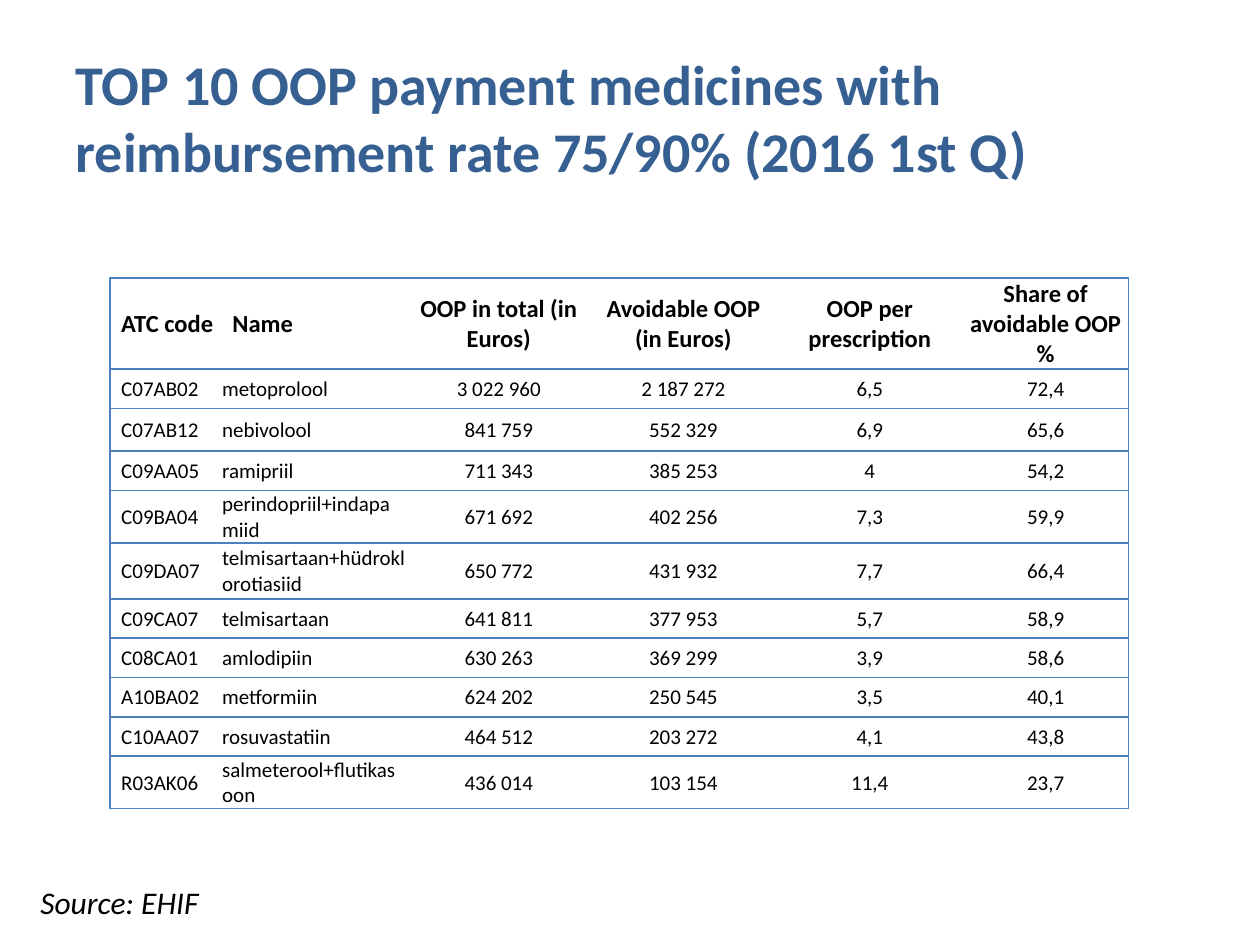
from dataclasses import dataclass
from typing import Any

from lxml import etree
from pptx import Presentation
from pptx.dml.color import RGBColor
from pptx.enum import text
from pptx.oxml import ns
from pptx.util import Pt

COLORS = {"title": "376092", "ink": "000000", "line": "4F81BD", "paper": "FFFFFF"}

HEADER = ["ATC code", "Name", "OOP in total (in Euros)", "Avoidable OOP (in Euros)",
          "OOP per prescription", "Share of avoidable OOP %"]
MEDICINES = [
    ["C07AB02", "metoprolool", "3 022 960", "2 187 272", "6,5", "72,4"],
    ["C07AB12", "nebivolool", "841 759", "552 329", "6,9", "65,6"],
    ["C09AA05", "ramipriil", "711 343", "385 253", "4", "54,2"],
    ["C09BA04", "perindopriil+indapamiid", "671 692", "402 256", "7,3", "59,9"],
    ["C09DA07", "telmisartaan+hüdroklorotiasiid", "650 772", "431 932", "7,7", "66,4"],
    ["C09CA07", "telmisartaan", "641 811", "377 953", "5,7", "58,9"],
    ["C08CA01", "amlodipiin", "630 263", "369 299", "3,9", "58,6"],
    ["A10BA02", "metformiin", "624 202", "250 545", "3,5", "40,1"],
    ["C10AA07", "rosuvastatiin", "464 512", "203 272", "4,1", "43,8"],
    ["R03AK06", "salmeterool+flutikasoon", "436 014", "103 154", "11,4", "23,7"],
]
COL_WIDTHS = [63.5, 106.5, 104.5, 106.5, 106.5, 94.5]
ROW_HEIGHTS = [51, 22.5, 24.5, 22.5, 29.5, 32, 22.5, 22.5, 22.5, 22.5, 29.5]


@dataclass
class Deck:
    slide: Any
    font: str = "Calibri"
    line_width: float = 1

    def style(self, tf, size, color="ink", bold=False, italic=False,
              align=text.PP_ALIGN.LEFT):
        for p in tf.paragraphs:
            p.alignment = align
            for r in p.runs:
                r.font.name, r.font.size = self.font, Pt(size)
                r.font.bold, r.font.italic = bold, italic
                r.font.color.rgb = RGBColor.from_string(COLORS[color])

    def title(self, words, left, top, width, height):
        sp = self.slide.shapes.title
        sp.left, sp.top, sp.width, sp.height = map(Pt, (left, top, width, height))
        tf = sp.text_frame
        tf.text = words
        tf.vertical_anchor = text.MSO_ANCHOR.MIDDLE
        self.style(tf, 32, "title", bold=True)

    def note(self, words, left, top, width, height):
        sp = self.slide.shapes.add_textbox(*map(Pt, (left, top, width, height)))
        tf = sp.text_frame
        tf.word_wrap = True
        tf.auto_size = text.MSO_AUTO_SIZE.SHAPE_TO_FIT_TEXT
        tf.text = words
        self.style(tf, 18, italic=True)

    def borders(self, cell, visible):
        """Draw the sides named in visible and hide the others."""
        tc_pr = cell._tc.get_or_add_tcPr()
        for side in "LRTB":
            ln = etree.SubElement(tc_pr, ns.qn(f"a:ln{side}"), w=str(Pt(self.line_width)))
            if side in visible:
                fill = etree.SubElement(ln, ns.qn("a:solidFill"))
                etree.SubElement(fill, ns.qn("a:srgbClr"), val=COLORS["line"])
            else:
                etree.SubElement(ln, ns.qn("a:noFill"))

    def cell(self, cell, words, row, col, last_col):
        self.borders(cell, "TB" + "L" * (col == 0) + "R" * (col == last_col))
        cell.fill.solid()
        cell.fill.fore_color.rgb = RGBColor.from_string(COLORS["paper"])
        is_header = row == 0
        indented = col == 0 or (is_header and col == 1)
        cell.margin_left = Pt(6.5 if indented else 0.7)
        cell.margin_right = cell.margin_top = Pt(0.7)
        cell.margin_bottom = 0
        cell.vertical_anchor = text.MSO_ANCHOR.MIDDLE
        cell.text_frame.text = words
        align = text.PP_ALIGN.LEFT if col < 2 else text.PP_ALIGN.CENTER
        self.style(cell.text_frame, 14 if is_header else 12, bold=is_header, align=align)

    def table(self, rows, left, top, widths, heights):
        table = self.slide.shapes.add_table(
            len(rows), len(widths), Pt(left), Pt(top),
            Pt(sum(widths)), Pt(sum(heights))).table
        table.horz_banding = False
        for column, width in zip(table.columns, widths):
            column.width = Pt(width)
        for row, height in zip(table.rows, heights):
            row.height = Pt(height)
        for i, row in enumerate(rows):
            for j, words in enumerate(row):
                self.cell(table.cell(i, j), words, i, j, len(widths) - 1)


def main():
    prs = Presentation()
    prs.slide_width, prs.slide_height = Pt(720), Pt(540)
    deck = Deck(prs.slides.add_slide(prs.slide_layouts[5]))
    deck.title("TOP 10 OOP payment medicines with reimbursement rate 75/90% (2016 1st Q)",
               36, 21.6, 648, 90)
    deck.table([HEADER] + MEDICINES, 62.8, 159, COL_WIDTHS, ROW_HEIGHTS)
    deck.note("Source: EHIF", 16, 501, 239, 29)
    prs.save("out.pptx")


if __name__ == "__main__":
    main()
